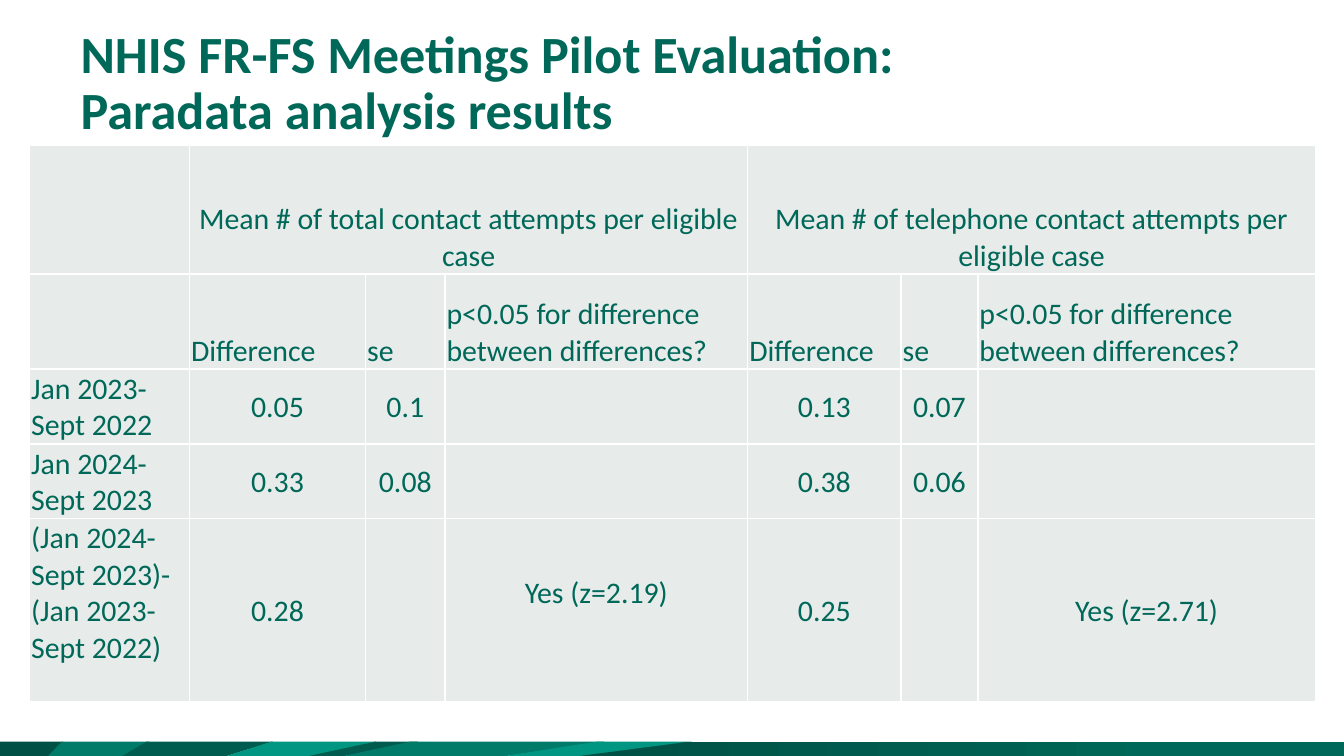
from dataclasses import dataclass

from lxml import etree
from pptx import Presentation
from pptx.dml.color import RGBColor
from pptx.enum.text import MSO_ANCHOR, MSO_AUTO_SIZE, PP_ALIGN
from pptx.oxml.ns import qn
from pptx.util import Cm, Pt

LEFT, CENTER = PP_ALIGN.LEFT, PP_ALIGN.CENTER
MIDDLE, BOTTOM = MSO_ANCHOR.MIDDLE, MSO_ANCHOR.BOTTOM
NO_AUTOFIT = MSO_AUTO_SIZE.NONE
TITLE_ONLY_LAYOUT = 5


@dataclass(frozen=True)
class Theme:
    font: str = "Calibri"
    text: str = "006858"
    cell: str = "E7EBEA"
    border: str = "FFFFFF"
    darkest: str = "005045"
    dark: str = "005C4F"
    medium: str = "007A69"
    bright: str = "009681"
    title_size: int = 28
    title_spacing: int = 30
    table_size: int = 16
    border_width: int = 1


THEME = Theme()
SLIDE_WIDTH, SLIDE_HEIGHT = 25.4, 14.29
BAND_TOP = 14.02

# Top left, top right, bottom right and bottom left x, then the colours.
FOOTER_BANDS = [
    (0, 1.19, 0.99, 0, THEME.darkest),
    (1.17, 2.82, 2.34, 0.91, THEME.medium),
    (2.77, 5.16, 4.29, 2.31, THEME.dark),
    (5.13, 7.11, 5.94, 4.29, THEME.bright),
    (7.09, 7.9, 6.53, 5.84, THEME.dark),
    (7.75, 11.43, 9.58, 6.5, THEME.medium),
    (11.28, 13.08, 11.05, 9.55, THEME.bright),
    (13.06, SLIDE_WIDTH, SLIDE_WIDTH, 10.95, THEME.darkest, THEME.text),
]

COLUMN_WIDTHS = [3.02, 3.33, 1.5, 5.72, 2.9, 1.45, 6.38]
ROW_HEIGHTS = [2.44, 1.8, 1.4, 1.4, 3.45]
GROUP_STARTS = (1, 4)
GROUP_SPAN = 3
HEADER_ROWS = 2
MEASURES = ["Difference", "se", "p<0.05 for difference between differences?"]
RESULTS = [
    ["", "Mean # of total contact attempts per eligible case", "", "",
     "Mean # of telephone contact attempts per eligible case", "", ""],
    ["", *MEASURES, *MEASURES],
    ["Jan 2023-Sept 2022", "0.05", "0.1", "", "0.13", "0.07", ""],
    ["Jan 2024- Sept 2023", "0.33", "0.08", "", "0.38", "0.06", ""],
    ["(Jan 2024-Sept 2023)-(Jan 2023-Sept 2022)",
     "0.28", "", "Yes (z=2.19)", "0.25", "", "Yes (z=2.71)"],
]
RAISED_CELLS = {(4, 0), (4, 3)}


def write_text(text_frame, text, *, size, color, font, bold=False,
               align=LEFT, spacing=None):
    """Fill the first paragraph; a vertical tab in text breaks the line."""
    paragraph = text_frame.paragraphs[0]
    paragraph.text = text
    paragraph.alignment = align
    if spacing:
        paragraph.line_spacing = Pt(spacing)
    for run in paragraph.runs:
        run.font.name = font
        run.font.size = Pt(size)
        run.font.bold = bold
        run.font.color.rgb = RGBColor.from_string(color)


class SlideBuilder:
    def __init__(self, slide, theme):
        self.slide = slide
        self.theme = theme

    def title(self, text, left, top, width, height):
        title = self.slide.shapes.title
        title.left, title.top = Cm(left), Cm(top)
        title.width, title.height = Cm(width), Cm(height)
        title.text_frame.auto_size = NO_AUTOFIT
        title.text_frame.vertical_anchor = BOTTOM
        write_text(title.text_frame, text, size=self.theme.title_size,
                   color=self.theme.text, font=self.theme.font, bold=True,
                   spacing=self.theme.title_spacing)

    def band(self, top_left, top_right, bottom_right, bottom_left, *colors):
        """Draw a slanted footer band; two colours make a gradient."""
        builder = self.slide.shapes.build_freeform(Cm(top_left), Cm(BAND_TOP))
        builder.add_line_segments([
            (Cm(top_right), Cm(BAND_TOP)),
            (Cm(bottom_right), Cm(SLIDE_HEIGHT)),
            (Cm(bottom_left), Cm(SLIDE_HEIGHT)),
        ])
        band = builder.convert_to_shape()
        band.shadow.inherit = False
        band.line.fill.background()
        if len(colors) == 1:
            band.fill.solid()
            band.fill.fore_color.rgb = RGBColor.from_string(colors[0])
            return
        band.fill.gradient()
        band.fill.gradient_angle = 0
        stops = zip(band.fill.gradient_stops, colors, (0, 0.78))
        for stop, color, position in stops:
            stop.color.rgb = RGBColor.from_string(color)
            stop.position = position

    def table(self, rows, left, top):
        frame = self.slide.shapes.add_table(
            len(rows), len(COLUMN_WIDTHS), Cm(left), Cm(top),
            Cm(sum(COLUMN_WIDTHS)), Cm(sum(ROW_HEIGHTS)))
        table = frame.table
        table.first_row = table.horz_banding = False
        for column, width in zip(table.columns, COLUMN_WIDTHS):
            column.width = Cm(width)
        for row, height in zip(table.rows, ROW_HEIGHTS):
            row.height = Cm(height)
        for start in GROUP_STARTS:
            table.cell(0, start).merge(table.cell(0, start + GROUP_SPAN - 1))
        for row_index, row in enumerate(rows):
            for column_index, text in enumerate(row):
                self.cell(table.cell(row_index, column_index), text,
                          row_index, column_index)

    def cell(self, cell, text, row_index, column_index):
        is_value = row_index >= HEADER_ROWS and column_index > 0
        cell.margin_left = cell.margin_right = cell.margin_top = Cm(0.03)
        raised = (row_index, column_index) in RAISED_CELLS
        cell.margin_bottom = Cm(0.68 if raised else 0)
        cell.vertical_anchor = MIDDLE if is_value else BOTTOM
        self.cell_borders(cell)
        cell.fill.solid()
        cell.fill.fore_color.rgb = RGBColor.from_string(self.theme.cell)
        if text:
            write_text(cell.text_frame, text, size=self.theme.table_size,
                       color=self.theme.text, font=self.theme.font,
                       align=CENTER if is_value or row_index == 0 else LEFT)

    def cell_borders(self, cell):
        properties = cell._tc.get_or_add_tcPr()
        for side in ("a:lnL", "a:lnR", "a:lnT", "a:lnB"):
            line = etree.SubElement(properties, qn(side),
                                    w=str(Pt(self.theme.border_width)))
            fill = etree.SubElement(line, qn("a:solidFill"))
            etree.SubElement(fill, qn("a:srgbClr"), val=self.theme.border)


def main():
    presentation = Presentation()
    presentation.slide_width = Cm(SLIDE_WIDTH)
    presentation.slide_height = Cm(SLIDE_HEIGHT)
    layout = presentation.slide_layouts[TITLE_ONLY_LAYOUT]
    builder = SlideBuilder(presentation.slides.add_slide(layout), THEME)
    for band in FOOTER_BANDS:
        builder.band(*band)
    builder.title("NHIS FR-FS Meetings Pilot Evaluation:\vParadata analysis results",
                  1.27, 0.38, 22.86, 2.39)
    builder.table(RESULTS, 0.56, 2.74)
    presentation.save("out.pptx")


if __name__ == "__main__":
    main()
